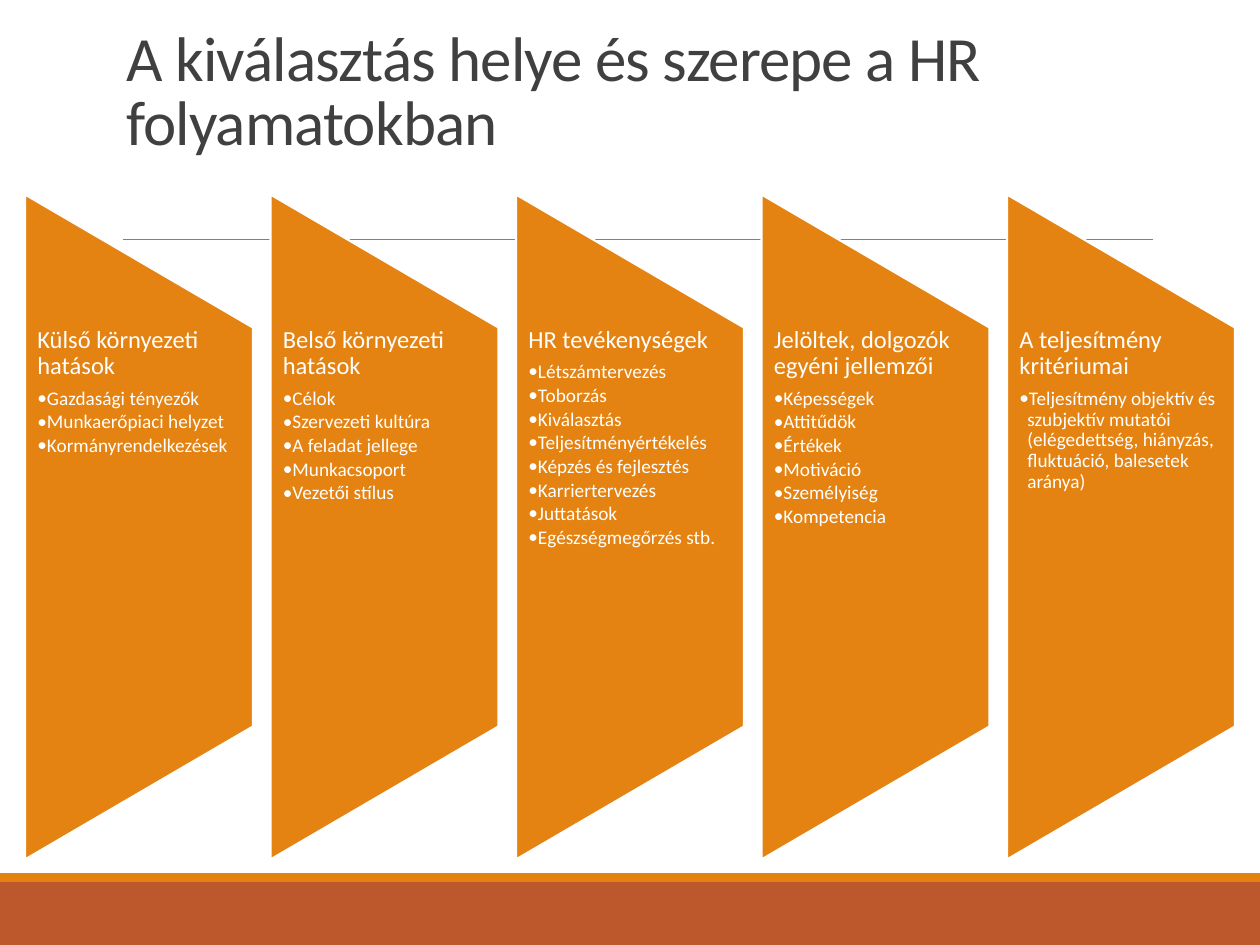
from dataclasses import dataclass

from lxml.etree import SubElement
from pptx import Presentation
from pptx.dml.color import RGBColor
from pptx.enum.shapes import MSO_CONNECTOR as Connector, MSO_SHAPE as Shape
from pptx.enum.text import MSO_ANCHOR as Anchor
from pptx.oxml.ns import qn
from pptx.util import Pt

TITLE = "A kiválasztás helye és szerepe a HR folyamatokban"
COLUMNS = [
    ("Külső környezeti hatások",
     ["Gazdasági tényezők", "Munkaerőpiaci helyzet", "Kormányrendelkezések"]),
    ("Belső környezeti hatások",
     ["Célok", "Szervezeti kultúra", "A feladat jellege", "Munkacsoport",
      "Vezetői stílus"]),
    ("HR tevékenységek",
     ["Létszámtervezés", "Toborzás", "Kiválasztás", "Teljesítményértékelés",
      "Képzés és fejlesztés", "Karriertervezés", "Juttatások",
      "Egészségmegőrzés stb."]),
    ("Jelöltek, dolgozók egyéni jellemzői",
     ["Képességek", "Attitűdök", "Értékek", "Motiváció", "Személyiség",
      "Kompetencia"]),
    ("A teljesítmény kritériumai",
     ["Teljesítmény objektív és szubjektív mutatói (elégedettség, hiányzás, "
      "fluktuáció, balesetek aránya)"]),
]


@dataclass(frozen=True)
class Theme:
    font: str = "Calibri"
    orange: str = "E48312"
    rust: str = "BD582C"
    rule: str = "808080"
    dark: str = "404040"
    white: str = "FFFFFF"
    title_size: int = 36
    heading_size: int = 14
    item_size: int = 11


THEME = Theme()
PAGE_WIDTH, PAGE_HEIGHT = 1260, 945
FIRST_LEFT, LAST_LEFT = 25, 1007
PANEL_WIDTH, PANEL_HEIGHT, PANEL_MIDDLE = 228, 665, 527
LIST_TOP, LIST_HEIGHT = 327, 399
INDENT = 8


def px(length):
    return round(length * 914400 / 126)


def box_of(*lengths):
    return [px(length) for length in lengths]


def color(code):
    return RGBColor.from_string(code)


def add_block(page, kind, place, fill, outline=None):
    block = page.shapes.add_shape(kind, *box_of(*place))
    block.shadow.inherit = False
    block.fill.solid()
    block.fill.fore_color.rgb = color(fill)
    if outline:
        block.line.color.rgb = color(outline)
        block.line.width = Pt(1.25)
    else:
        block.line.fill.background()
    return block


def add_text(page, place, texts):
    box = page.shapes.add_textbox(*box_of(*place))
    frame = box.text_frame
    frame.word_wrap = True
    frame.text = "\n".join(texts)
    return frame


def style(para, size, code, spacing, after=0):
    para.line_spacing = spacing
    para.space_after = Pt(after)
    for span in para.runs:
        span.font.name = THEME.font
        span.font.size = Pt(size)
        span.font.color.rgb = color(code)


def add_bullet(para):
    para.level = 1
    properties = para._p.get_or_add_pPr()
    properties.set("marL", str(px(INDENT)))
    properties.set("indent", str(-px(INDENT)))
    SubElement(properties, qn("a:buFont"), typeface=THEME.font)
    SubElement(properties, qn("a:buChar"), char="•")


def add_title(page):
    frame = add_text(page, (114, 39, 1040, 126), [TITLE])
    frame.vertical_anchor = Anchor.BOTTOM
    para = frame.paragraphs[0]
    style(para, THEME.title_size, THEME.dark, 0.85)
    para.runs[0].font._element.set("spc", "-50")


def add_rule(page):
    rule = page.shapes.add_connector(Connector.STRAIGHT, *box_of(123, 239, 1153, 239))
    rule.line.color.rgb = color(THEME.rule)
    rule.line.width = Pt(0.5)
    SubElement(rule._element.spPr, qn("a:effectLst"))


def add_column(page, left, heading, items):
    panel = add_block(
        page, Shape.FLOWCHART_MANUAL_OPERATION,
        (left + (PANEL_WIDTH - PANEL_HEIGHT) / 2, PANEL_MIDDLE - PANEL_WIDTH / 2,
         PANEL_HEIGHT, PANEL_WIDTH),
        THEME.orange, THEME.white)
    panel.rotation = 270
    frame = add_text(page, (left, LIST_TOP, PANEL_WIDTH, LIST_HEIGHT), [heading, *items])
    frame.margin_top = frame.margin_bottom = 0
    first, *rest = frame.paragraphs
    style(first, THEME.heading_size, THEME.white, 0.9, 4.9)
    for para in rest:
        style(para, THEME.item_size, THEME.white, 0.9, 1.65)
        add_bullet(para)


def main():
    deck = Presentation()
    deck.slide_width, deck.slide_height = box_of(PAGE_WIDTH, PAGE_HEIGHT)
    page = deck.slides.add_slide(deck.slide_layouts[6])
    add_block(page, Shape.RECTANGLE, (0, 882, PAGE_WIDTH, 63), THEME.rust)
    add_block(page, Shape.RECTANGLE, (0, 873, PAGE_WIDTH, 9), THEME.orange)
    add_rule(page)
    add_title(page)
    pitch = (LAST_LEFT - FIRST_LEFT) / (len(COLUMNS) - 1)
    for index, (heading, items) in enumerate(COLUMNS):
        add_column(page, FIRST_LEFT + index * pitch, heading, items)
    deck.save("out.pptx")


if __name__ == "__main__":
    main()
